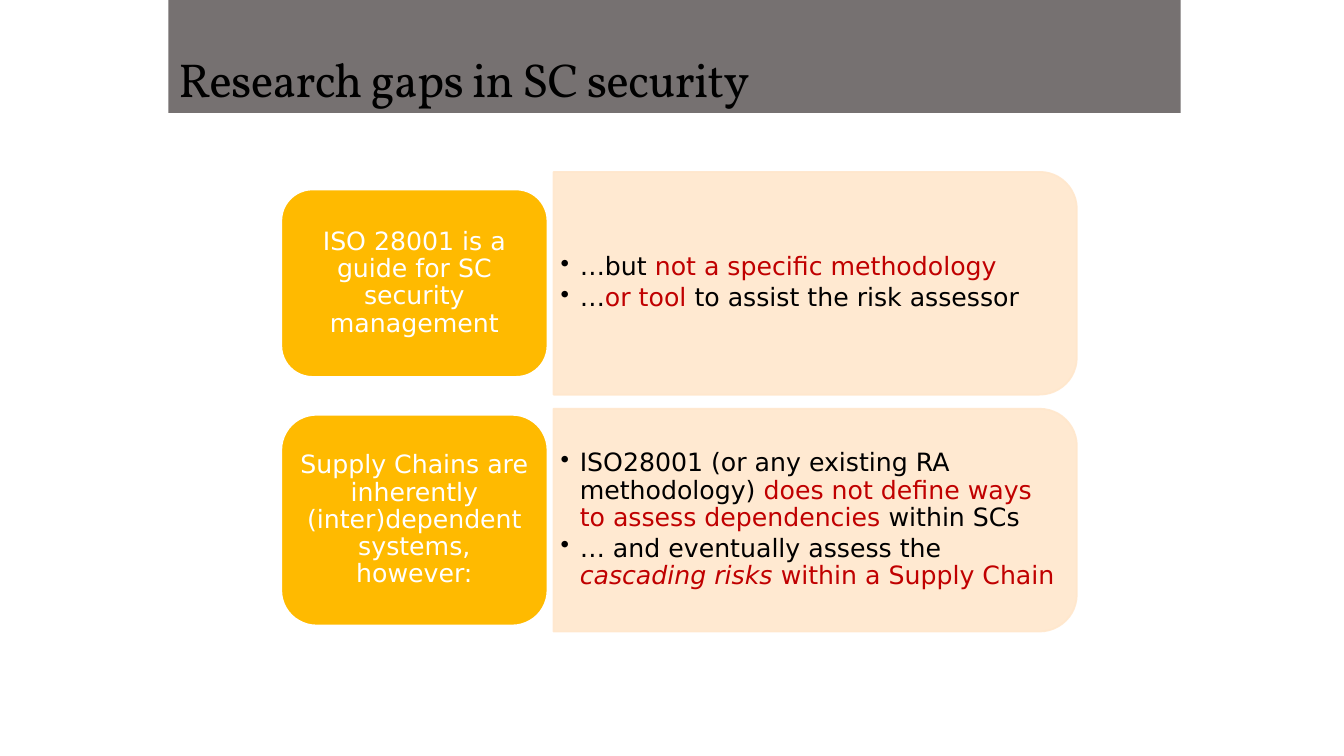
from pptx import Presentation
from pptx.dml.color import RGBColor
from pptx.enum.shapes import MSO_SHAPE as Preset
from pptx.enum.text import MSO_ANCHOR as Anchor, MSO_AUTO_SIZE as AutoSize, PP_ALIGN as Align
from pptx.oxml.ns import qn
from pptx.util import Inches, Pt
from lxml.etree import SubElement

COLORS = {
    "banner": "767171",
    "label": "FFBA00",
    "panel": "FFE7CC",
    "white": "FFFFFF",
    "text": "000000",
    "accent": "C00000",
}


class GapSlide:
    heading_font = "Vollkorn"
    body_font = "DejaVu Sans"
    body_size = 18

    def __init__(self, deck):
        self.slide = deck.slides.add_slide(deck.slide_layouts[5])

    def color(self, name):
        return RGBColor.from_string(COLORS[name])

    def add_run(self, paragraph, text, color="text", font=body_font, size=body_size, italic=False):
        run = paragraph.add_run()
        run.text = text
        run.font.name = font
        run.font.size = Pt(size)
        run.font.italic = italic
        run.font.color.rgb = self.color(color)
        return run

    def prepare_frame(self, shape):
        frame = shape.text_frame
        frame.word_wrap = True
        frame.vertical_anchor = Anchor.MIDDLE
        frame.margin_left = frame.margin_right = Inches(0.07)
        frame.margin_top = frame.margin_bottom = Inches(0.04)
        return frame

    def add_block(self, preset, left, top, width, height, fill, line):
        block = self.slide.shapes.add_shape(
            preset, Inches(left), Inches(top), Inches(width), Inches(height))
        block.shadow.inherit = False
        block.fill.solid()
        block.fill.fore_color.rgb = self.color(fill)
        block.line.color.rgb = self.color(line)
        block.line.width = Pt(1.25)
        return block

    def add_title(self, text):
        title = self.slide.shapes.title
        title.left, title.top = Inches(1.67), Inches(-0.03)
        title.width, title.height = Inches(10.04), Inches(1.15)
        title.fill.solid()
        title.fill.fore_color.rgb = self.color("banner")
        frame = title.text_frame
        frame.auto_size = AutoSize.NONE
        frame.vertical_anchor = Anchor.BOTTOM
        paragraph = frame.paragraphs[0]
        paragraph.alignment = Align.LEFT
        paragraph.line_spacing = 0.9
        run = self.add_run(paragraph, text, font=self.heading_font, size=34)
        run.font._element.set("spc", "-50")

    def add_label(self, text, center, height):
        label = self.add_block(
            Preset.ROUNDED_RECTANGLE, 2.79, center - height / 2, 2.64, height, "label", "white")
        paragraph = self.prepare_frame(label).paragraphs[0]
        paragraph.alignment = Align.CENTER
        paragraph.line_spacing = 0.9
        self.add_run(paragraph, text, "white")

    def add_panel(self, center):
        depth, length = 2.21, 5.19
        panel = self.add_block(
            Preset.ROUND_2_SAME_RECTANGLE, 6.98, center - length / 2, depth, length,
            "panel", "panel")
        panel.rotation = 90
        for tint in panel._element.spPr.iter(qn("a:srgbClr")):
            SubElement(tint, qn("a:alpha"), val="90000")

    def add_bullets(self, bullets, center):
        height = 1.99
        box = self.slide.shapes.add_textbox(
            Inches(5.49), Inches(center - height / 2), Inches(5.08), Inches(height))
        frame = self.prepare_frame(box)
        for index, pieces in enumerate(bullets):
            paragraph = frame.add_paragraph() if index else frame.paragraphs[0]
            paragraph.line_spacing = 0.9
            paragraph.space_after = Pt(2.7)
            properties = paragraph._p.get_or_add_pPr()
            properties.set("marL", str(Inches(0.19)))
            properties.set("indent", str(Inches(-0.19)))
            SubElement(properties, qn("a:buChar"), char="•")
            for text, *style in pieces:
                self.add_run(paragraph, text, *style[:1], italic="italic" in style)


GAPS = [
    {
        "center": 2.81,
        "label": "ISO 28001 is a guide for SC security management",
        "label_height": 1.86,
        "bullets": [
            [("…but ",), ("not a specific methodology", "accent")],
            [("…",), ("or tool ", "accent"), ("to assist the risk assessor",)],
        ],
    },
    {
        "center": 5.16,
        "label": "Supply Chains are inherently (inter)dependent systems, however:",
        "label_height": 2.09,
        "bullets": [
            [("ISO28001 (or any existing RA methodology) ",),
             ("does not define ways to assess dependencies ", "accent"), ("within SCs",)],
            [("… and eventually assess the ",), ("cascading risks ", "accent", "italic"),
             ("within a Supply Chain", "accent")],
        ],
    },
]


def main():
    deck = Presentation()
    deck.slide_width, deck.slide_height = Inches(13.33), Inches(7.5)
    page = GapSlide(deck)
    page.add_title("Research gaps in SC security")
    for gap in GAPS:
        page.add_panel(gap["center"])
        page.add_bullets(gap["bullets"], gap["center"])
        page.add_label(gap["label"], gap["center"], gap["label_height"])
    deck.save("out.pptx")


if __name__ == "__main__":
    main()
